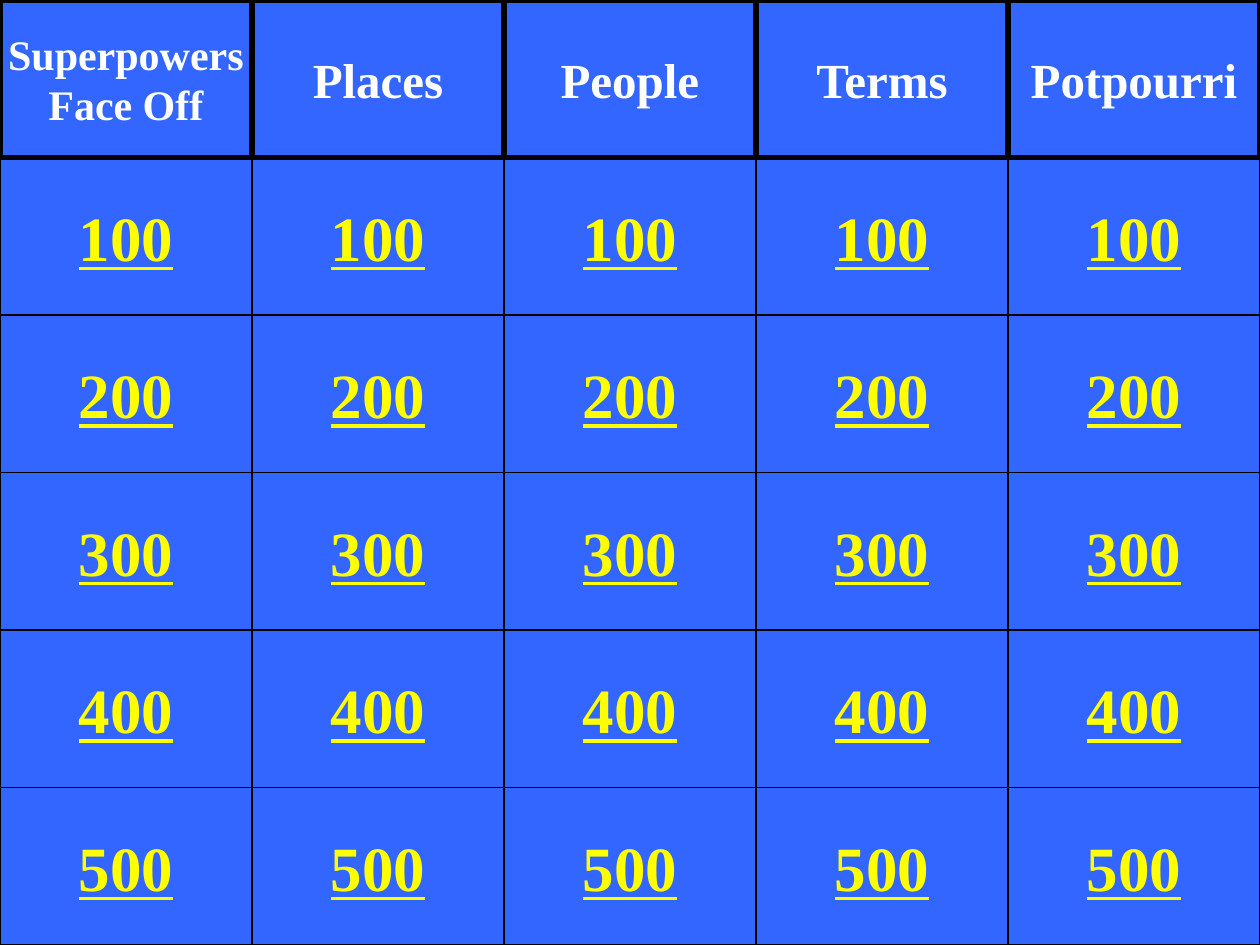
from dataclasses import dataclass

from pptx import Presentation
from pptx.dml.color import RGBColor
from pptx.enum.shapes import MSO_SHAPE
from pptx.enum.text import MSO_ANCHOR, PP_ALIGN
from pptx.util import Inches, Pt

BUTTON = MSO_SHAPE.ACTION_BUTTON_CUSTOM
RECTANGLE = MSO_SHAPE.RECTANGLE
CENTER = PP_ALIGN.CENTER
MIDDLE = MSO_ANCHOR.MIDDLE


@dataclass(frozen=True)
class Theme:
    font: str = "Times New Roman"
    board: RGBColor = RGBColor(0x33, 0x66, 0xFF)
    border: RGBColor = RGBColor(0, 0, 0)
    category: RGBColor = RGBColor(0xFF, 0xFF, 0xFF)
    points: RGBColor = RGBColor(0xFF, 0xFF, 0)
    category_size: int = 28
    long_category_size: int = 24
    points_size: int = 36
    category_border: float = 3
    points_border: float = 0.75


THEME = Theme()

# A vertical tab is a line break within the paragraph.
CATEGORIES = ["Superpowers\vFace Off", "Places", "People", "Terms", "Potpourri"]
POINTS = ["100", "200", "300", "400", "500"]

prs = Presentation()
prs.slide_width, prs.slide_height = Inches(10), Inches(7.5)
column_width = prs.slide_width // len(CATEGORIES)
row_height = prs.slide_height // (len(POINTS) + 1)

slide = prs.slides.add_slide(prs.slide_layouts[6])
slide.background.fill.solid()
slide.background.fill.fore_color.rgb = THEME.board


def add_cell(kind, column, row, text, size, color, border, underline=None):
    """Fill one place of the board's grid; row 0 holds the categories."""
    cell = slide.shapes.add_shape(
        kind, column * column_width, row * row_height, column_width, row_height)
    cell.shadow.inherit = False
    cell.fill.solid()
    cell.fill.fore_color.rgb = THEME.board
    cell.line.color.rgb = THEME.border
    cell.line.width = Pt(border)

    frame = cell.text_frame
    frame.word_wrap = False
    frame.vertical_anchor = MIDDLE
    paragraph = frame.paragraphs[0]
    paragraph.text = text
    paragraph.alignment = CENTER
    font = paragraph.font
    font.name = THEME.font
    font.size = Pt(size)
    font.bold = True
    font.underline = underline
    font.color.rgb = color


for column in range(len(CATEGORIES)):
    for row, points in enumerate(POINTS, start=1):
        add_cell(BUTTON, column, row, points, THEME.points_size,
                 THEME.points, THEME.points_border, underline=True)

# Categories come last so that their thick borders lie over the buttons.
for column, category in enumerate(CATEGORIES):
    size = THEME.long_category_size if "\v" in category else THEME.category_size
    add_cell(RECTANGLE, column, 0, category, size,
             THEME.category, THEME.category_border)

prs.save("out.pptx")
